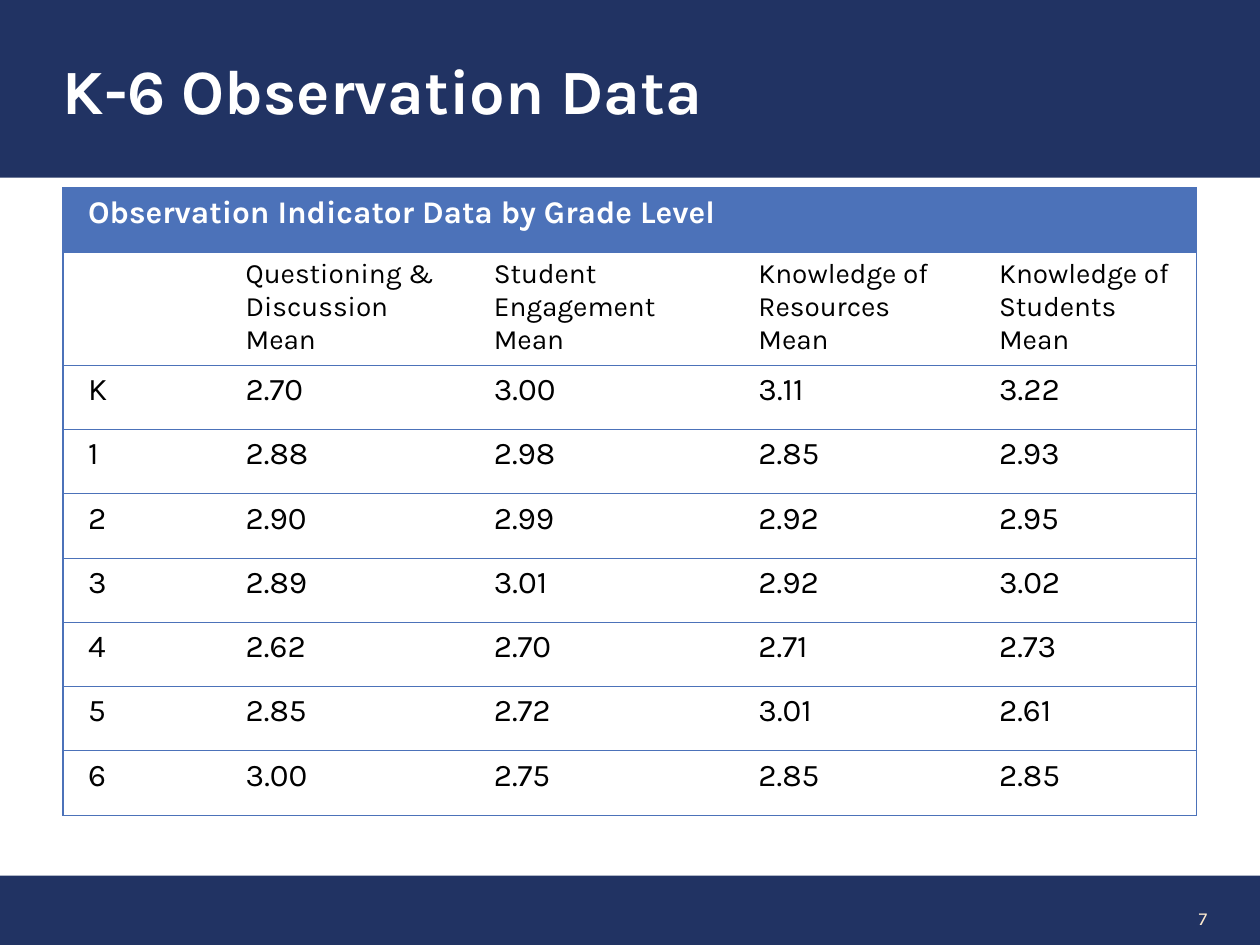
from dataclasses import dataclass

from lxml.etree import SubElement
from pptx import Presentation
from pptx.dml.color import RGBColor
from pptx.enum.shapes import MSO_SHAPE
from pptx.enum.text import MSO_ANCHOR, PP_ALIGN
from pptx.oxml.ns import qn
from pptx.util import Inches, Pt


@dataclass(frozen=True)
class Theme:
    font: str = "Karla"
    navy: str = "213363"
    blue: str = "4C72B9"
    white: str = "FFFFFF"
    cream: str = "FEEBD0"
    black: str = "000000"
    title: float = 36
    body: float = 18
    head: float = 16
    note: float = 10.5
    line: float = 0.75


THEME = Theme()
INSETS = {"margin_left": 0.2, "margin_right": 0.2,
          "margin_top": 0.05, "margin_bottom": 0.05}
COLS = [1.25, 1.97, 2.1, 1.91, 1.77]
ROW, HEAD_ROW = 0.51, 0.88
CAPTION = "Observation Indicator Data by Grade Level"
HEADS = ["", "Questioning & Discussion Mean", "Student Engagement Mean",
         "Knowledge of Resources Mean", "Knowledge of Students Mean"]
GRADES = [
    ["K", "2.70", "3.00", "3.11", "3.22"],
    ["1", "2.88", "2.98", "2.85", "2.93"],
    ["2", "2.90", "2.99", "2.92", "2.95"],
    ["3", "2.89", "3.01", "2.92", "3.02"],
    ["4", "2.62", "2.70", "2.71", "2.73"],
    ["5", "2.85", "2.72", "3.01", "2.61"],
    ["6", "3.00", "2.75", "2.85", "2.85"],
]


def apply(item, values):
    for name, value in values.items():
        setattr(item, name, value)


def write(frame, text, size, color, bold=False, align=PP_ALIGN.LEFT):
    para = frame.paragraphs[0]
    para.alignment = align
    run = para.add_run()
    run.text = text
    apply(run.font, {"name": THEME.font, "size": Pt(size), "bold": bold})
    run.font.color.rgb = RGBColor.from_string(color)


def add_band(slide, box):
    band = slide.shapes.add_shape(MSO_SHAPE.RECTANGLE, *map(Inches, box))
    band.shadow.inherit = False
    band.fill.solid()
    band.fill.fore_color.rgb = RGBColor.from_string(THEME.navy)
    band.line.fill.background()
    return band


def add_title(slide, box, text):
    frame = add_band(slide, box).text_frame
    apply(frame, {"margin_left": Inches(0.5), "word_wrap": True,
                  "vertical_anchor": MSO_ANCHOR.MIDDLE})
    write(frame, text, THEME.title, THEME.white, bold=True)


def add_footer(slide, box, number):
    left, top, width, _ = box
    add_band(slide, box)
    note = slide.shapes.add_textbox(
        Inches(left + width - 1.78), Inches(top + 0.14), Inches(1.46), Inches(0.4))
    apply(note.text_frame, {"word_wrap": True,
                            "vertical_anchor": MSO_ANCHOR.MIDDLE})
    write(note.text_frame, number, THEME.note, THEME.cream, align=PP_ALIGN.RIGHT)


def set_edges(cell, edges):
    """Draw the sides named in edges (L, R, T, B) and clear the others."""
    props = cell._tc.get_or_add_tcPr()
    for side in "LRTB":
        line = SubElement(props, qn(f"a:ln{side}"), w=str(Pt(THEME.line)))
        if side in edges:
            fill = SubElement(line, qn("a:solidFill"))
            SubElement(fill, qn("a:srgbClr"), val=THEME.blue)
        else:
            SubElement(line, qn("a:noFill"))


def fill_cell(cell, text, size, color, bold=False, fill=None):
    apply(cell, {name: Inches(gap) for name, gap in INSETS.items()})
    if fill:
        cell.fill.solid()
        cell.fill.fore_color.rgb = RGBColor.from_string(fill)
    else:
        cell.fill.background()
    if text:
        write(cell.text_frame, text, size, color, bold)


def add_grid(slide, box):
    count, last = len(GRADES) + 2, len(COLS) - 1
    table = slide.shapes.add_table(count, len(COLS), *map(Inches, box)).table
    apply(table, {"first_row": False, "horz_banding": False})
    for col, width in zip(table.columns, COLS):
        col.width = Inches(width)
    for i, row in enumerate(table.rows):
        row.height = Inches(HEAD_ROW if i == 1 else ROW)
        for j, cell in enumerate(row.cells):
            set_edges(cell, "TB" + "L" * (j == 0) + "R" * (j == last))

    table.cell(0, 0).merge(table.cell(0, last))
    set_edges_right = table.cell(0, 0)._tc.tcPr.find(qn("a:lnR"))
    set_edges_right.remove(set_edges_right[0])
    edge = SubElement(set_edges_right, qn("a:solidFill"))
    SubElement(edge, qn("a:srgbClr"), val=THEME.blue)
    fill_cell(table.cell(0, 0), CAPTION, THEME.body, THEME.white, True, THEME.blue)
    for i, texts in enumerate([HEADS] + GRADES, start=1):
        size = THEME.head if i == 1 else THEME.body
        for j, text in enumerate(texts):
            fill_cell(table.cell(i, j), text, size, THEME.black)


def main():
    deck = Presentation()
    apply(deck, {"slide_width": Inches(10), "slide_height": Inches(7.5)})
    slide = deck.slides.add_slide(deck.slide_layouts[6])
    add_footer(slide, (0, 6.95, 10, 0.55), "7")
    add_title(slide, (0, 0, 10, 1.41), "K-6 Observation Data")
    add_grid(slide, (0.5, 1.49, 9, 4.97))
    deck.save("out.pptx")


if __name__ == "__main__":
    main()
